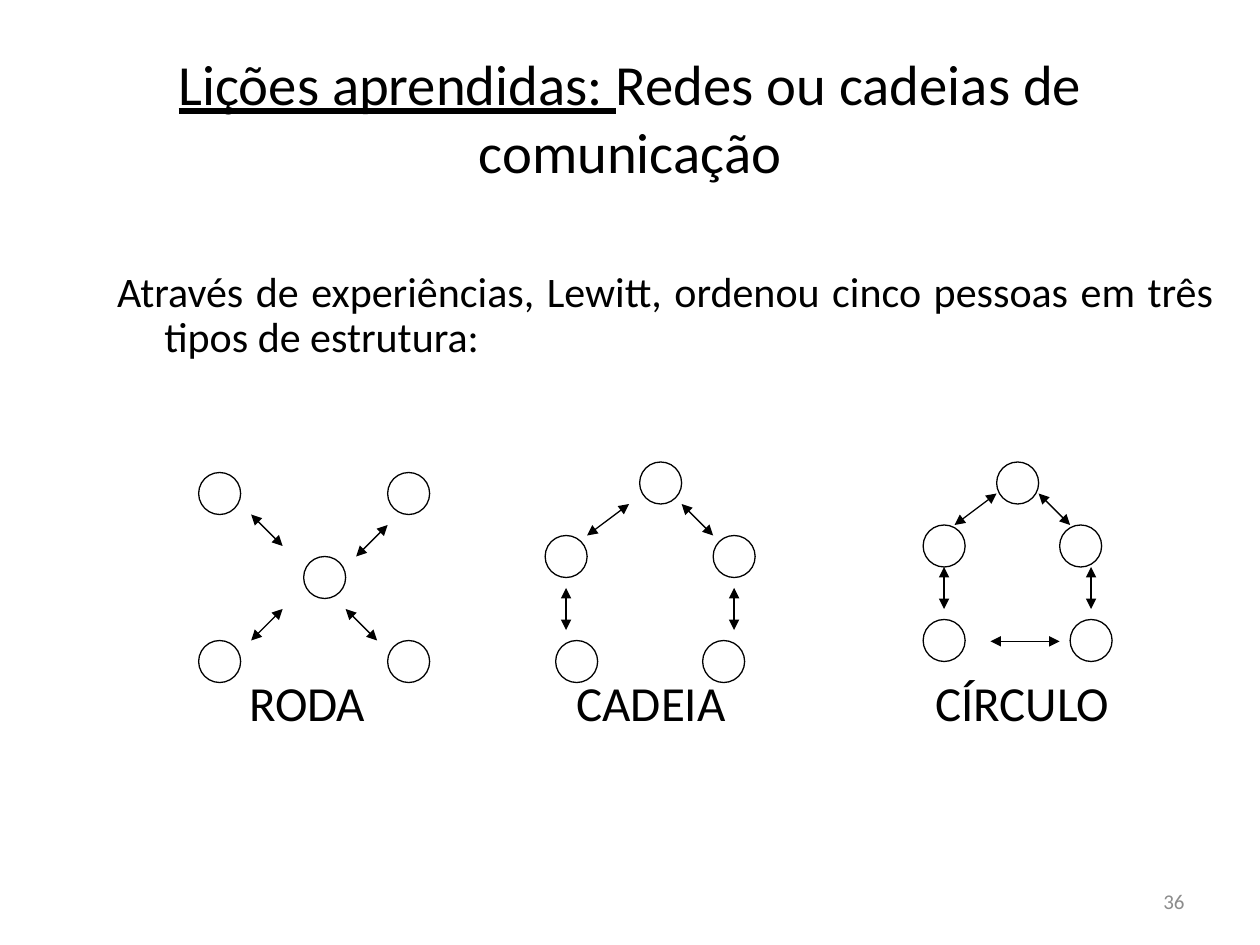
from lxml import etree
from pptx import Presentation
from pptx.dml.color import RGBColor
from pptx.enum.shapes import MSO_CONNECTOR as Line, MSO_SHAPE as Shape
from pptx.enum.text import MSO_ANCHOR as Anchor, PP_ALIGN as Align
from pptx.oxml.ns import qn
from pptx.util import Pt

BLACK = RGBColor(0x00, 0x00, 0x00)
GRAY = RGBColor(0x8C, 0x8C, 0x8C)
FONT = "Calibri"
DIAMETER = 24

deck = Presentation()
deck.slide_width, deck.slide_height = Pt(720), Pt(540)
page = deck.slides.add_slide(deck.slide_layouts[6])


def add_text(bounds, pieces, size, align, anchor=Anchor.MIDDLE, color=BLACK):
    box = page.shapes.add_textbox(*[Pt(value) for value in bounds])
    box.text_frame.word_wrap = True
    box.text_frame.vertical_anchor = anchor
    para = box.text_frame.paragraphs[0]
    para.alignment = align
    for piece in pieces:
        para.add_run().text = piece
    para.font.name = FONT
    para.font.size = Pt(size)
    para.font.color.rgb = color
    return para


def add_double_arrow(start_x, start_y, end_x, end_y):
    arrow = page.shapes.add_connector(
        Line.STRAIGHT, Pt(start_x), Pt(start_y), Pt(end_x), Pt(end_y))
    arrow.line.color.rgb = BLACK
    arrow.line.width = Pt(0.75)
    outline = arrow.line._get_or_add_ln()
    for end in ("a:headEnd", "a:tailEnd"):
        etree.SubElement(outline, qn(end), type="triangle")
    etree.SubElement(arrow._element.spPr, qn("a:effectLst"))


add_text((516, 500.5, 168, 28.8), ["36"], 12, Align.RIGHT, color=GRAY)

title = add_text((36, 21.6, 648, 90),
                 ["Lições aprendidas: ", "Redes ou cadeias de comunicação"],
                 32.4, Align.CENTER)
title.runs[0].font.underline = True

intro = add_text(
    (59.8, 151.2, 640.8, 64),
    ["Através de experiências, Lewitt, ordenou cinco pessoas em três tipos de estrutura:"],
    24, Align.JUSTIFY, Anchor.TOP)
intro.line_spacing = 0.9
indent = intro._p.get_or_add_pPr()
indent.set("marL", str(Pt(27)))
indent.set("indent", str(Pt(-27)))

networks = [
    ("RODA", 175.5,
     [(173.5, 318), (113.5, 366), (221.5, 366), (113.5, 270), (221.5, 270)],
     [(197.5, 348, 215.5, 366), (143.5, 294, 161.5, 312),
      (221.5, 300, 203.5, 318), (161.5, 348, 143.5, 366)]),
    ("CADEIA", 372,
     [(317.5, 366), (401.5, 366), (311.5, 306), (407.5, 306), (365.5, 264)],
     [(323.5, 336, 323.5, 360), (419.5, 336, 419.5, 360),
      (359.5, 288, 335.5, 306), (389.5, 288, 407.5, 306)]),
    ("CÍRCULO", 584,
     [(611.5, 354), (527.5, 354), (605.5, 300), (527.5, 300), (569.5, 264)],
     [(539.5, 324, 539.5, 348), (623.5, 324, 623.5, 348),
      (569.5, 282, 545.5, 300), (593.5, 282, 611.5, 300),
      (566, 366.5, 605.5, 366.5)]),
]

for name, center, people, links in networks:
    for left, top in people:
        person = page.shapes.add_shape(
            Shape.OVAL, Pt(left), Pt(top), Pt(DIAMETER), Pt(DIAMETER))
        person.shadow.inherit = False
        person.fill.background()
        person.line.color.rgb = BLACK
        person.line.width = Pt(0.75)
    for link in links:
        add_double_arrow(*link)
    add_text((center - 70, 380, 140, 42), [name], 28, Align.CENTER)

deck.save("out.pptx")
